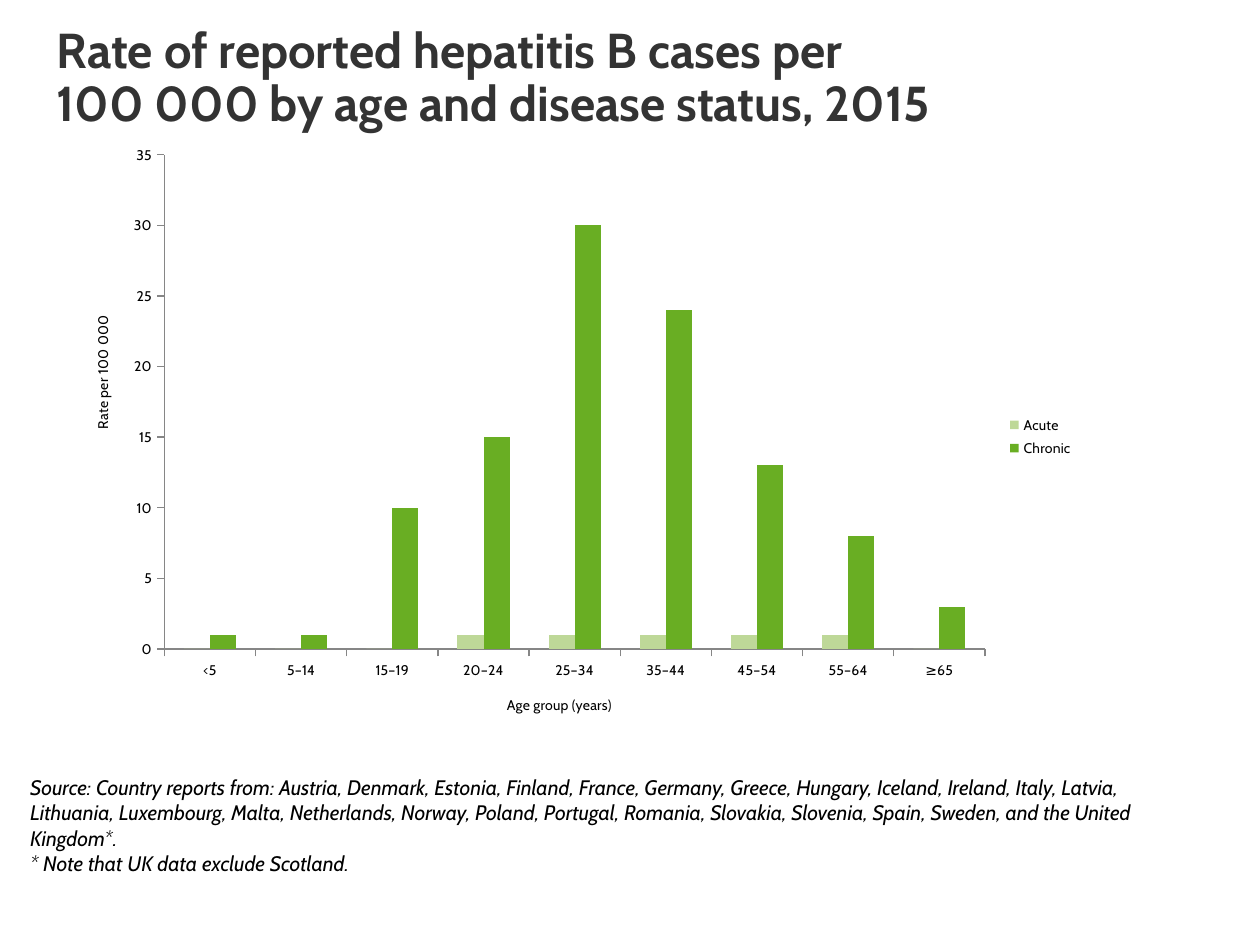
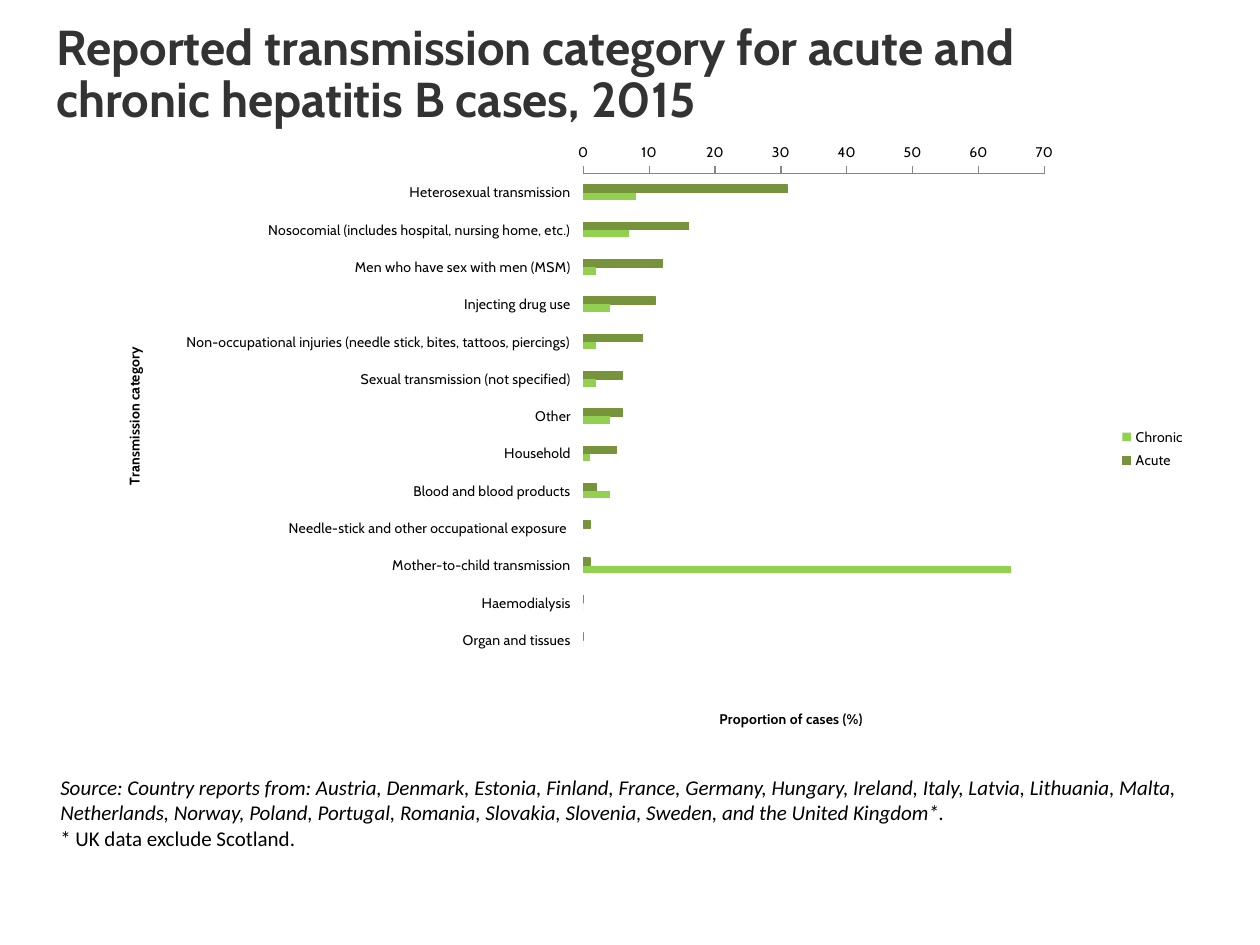
from lxml import etree
from pptx import Presentation
from pptx.chart.data import CategoryChartData
from pptx.dml.color import RGBColor
from pptx.enum.chart import XL_CHART_TYPE, XL_LEGEND_POSITION, XL_TICK_MARK
from pptx.enum.text import MSO_ANCHOR, MSO_AUTO_SIZE, PP_ALIGN
from pptx.oxml.ns import qn
from pptx.util import Inches, Pt

BLACK = RGBColor(0x00, 0x00, 0x00)
TITLE_GREY = RGBColor(0x33, 0x33, 0x33)
AXIS_GREY = RGBColor(0x86, 0x86, 0x86)
PALE_GREEN = RGBColor(0xBE, 0xD8, 0x98)
GREEN = RGBColor(0x69, 0xAE, 0x23)
OLIVE = RGBColor(0x77, 0x93, 0x3C)
LIME = RGBColor(0x92, 0xD0, 0x50)

AGE_GROUPS = ["<5", "5–14", "15–19", "20–24", "25–34", "35–44", "45–54", "55–64", "≥65"]
AGE_RATES = [
    ("Acute", [0, 0, 0, 1, 1, 1, 1, 1, 0], PALE_GREEN),
    ("Chronic", [1, 1, 10, 15, 30, 24, 13, 8, 3], GREEN),
]
ROUTES = [
    "Heterosexual transmission",
    "Nosocomial (includes hospital, nursing home, etc.)",
    "Men who have sex with men (MSM)",
    "Injecting drug use",
    "Non-occupational injuries (needle stick, bites, tattoos, piercings)",
    "Sexual transmission (not specified)",
    "Other",
    "Household",
    "Blood and blood products",
    "Needle-stick and other occupational exposure ",
    "Mother-to-child transmission",
    "Haemodialysis",
    "Organ and tissues",
]
ROUTE_SHARES = [
    ("Acute", [31, 16, 12, 11, 9, 6, 6, 5, 2, 1, 1, 0, 0], OLIVE),
    ("Chronic", [8, 7, 2, 4, 2, 2, 4, 1, 4, 0, 65, 0, 0], LIME),
]


class Deck:
    """Holds the shared style and the current slide."""

    FONT = "Cabin"
    TITLE = {"name": FONT, "size": Pt(28), "bold": True}
    NOTE = {"size": Pt(12), "bold": False}
    CHART = {"name": FONT, "size": Pt(8), "bold": False}

    def __init__(self):
        self.prs = Presentation()
        self.prs.slide_width, self.prs.slide_height = Inches(10), Inches(7.5)
        self.s = None

    def style(self, font, color, **values):
        for key, value in values.items():
            setattr(font, key, value)
        font.color.rgb = color

    def place(self, sp, box):
        for key, value in zip(("left", "top", "width", "height"), box):
            setattr(sp, key, Inches(value))

    def slide(self, title, top):
        self.s = self.prs.slides.add_slide(self.prs.slide_layouts[5])
        sp = self.s.shapes.title
        self.place(sp, (0.35, top, 9, 0.9))
        tf = sp.text_frame
        tf.text = title
        tf.word_wrap = True
        tf.auto_size = MSO_AUTO_SIZE.NONE
        tf.vertical_anchor = MSO_ANCHOR.TOP
        p = tf.paragraphs[0]
        p.alignment = PP_ALIGN.LEFT
        p.line_spacing = 0.9
        for r in p.runs:
            self.style(r.font, TITLE_GREY, **self.TITLE)

    def note(self, box, lines, font_name):
        tf = self.s.shapes.add_textbox(*map(Inches, box)).text_frame
        tf.word_wrap = True
        tf.auto_size = MSO_AUTO_SIZE.SHAPE_TO_FIT_TEXT
        for i, (text, italic) in enumerate(lines):
            p = tf.add_paragraph() if i else tf.paragraphs[0]
            r = p.add_run()
            r.text = text
            self.style(r.font, BLACK, name=font_name, italic=italic, **self.NOTE)

    def axis(self, axis, title, bold):
        axis.has_major_gridlines = False
        axis.major_tick_mark = XL_TICK_MARK.OUTSIDE
        axis.minor_tick_mark = XL_TICK_MARK.NONE
        axis.format.line.color.rgb = AXIS_GREY
        axis.format.line.width = Pt(0.75)
        self.style(axis.tick_labels.font, BLACK, **self.CHART)
        tf = axis.axis_title.text_frame
        tf.text = title
        self.style(tf.paragraphs[0].runs[0].font, BLACK, **{**self.CHART, "bold": bold})

    def chart(self, kind, box, categories, series, titles, top_value, step, gap, bold=False):
        data = CategoryChartData(number_format="0")
        data.categories = categories
        for name, values, _ in series:
            data.add_series(name, values)
        chart = self.s.shapes.add_chart(kind, *map(Inches, box), data).chart
        self.style(chart.font, BLACK, **self.CHART)
        chart.has_title = False
        chart.has_legend = True
        chart.legend.position = XL_LEGEND_POSITION.RIGHT
        chart.legend.include_in_layout = False
        self.style(chart.legend.font, BLACK, **self.CHART)
        plot = chart.plots[0]
        plot.gap_width = gap
        plot.overlap = 0
        plot.vary_by_categories = False
        for ser, (_, _, color) in zip(plot.series, series):
            ser.format.fill.solid()
            ser.format.fill.fore_color.rgb = color
        for axis, title in zip((chart.category_axis, chart.value_axis), titles):
            self.axis(axis, title, bold)
        axis = chart.value_axis
        axis.minimum_scale, axis.maximum_scale, axis.major_unit = 0, top_value, step
        axis.tick_labels.number_format = "0"
        axis.tick_labels.number_format_is_linked = False
        return chart

    def layout(self, parent, chart_box, offsets, **modes):
        for old in parent.findall(qn("c:layout")):
            parent.remove(old)
        layout = etree.Element(qn("c:layout"))
        manual = etree.SubElement(layout, qn("c:manualLayout"))
        width, height = chart_box[2:]
        shares = [length / size for length, size in zip(offsets, (width, height) * 2)]
        values = {**modes, "xMode": "edge", "yMode": "edge", **dict(zip("xywh", shares))}
        for key, value in values.items():
            etree.SubElement(manual, qn(f"c:{key}")).set("val", str(value))
        text = parent.find(qn("c:tx"))
        parent.insert(0 if text is None else parent.index(text) + 1, layout)

    def move_title(self, axis, chart_box, offsets):
        self.layout(axis.axis_title._element, chart_box, offsets)

    def move_plot(self, chart, chart_box, offsets):
        area = chart.plots[0]._element.getparent()
        self.layout(area, chart_box, offsets, layoutTarget="inner")


def age_slide(deck):
    """Rates by age group."""
    deck.slide("Rate of reported hepatitis B cases per \v"
               "100 000 by age and disease status, 2015", 0.16)
    deck.note((0.14, 6.1, 9.21, 1.11), [
        ("Source: Country reports from: Austria, Denmark, Estonia, Finland, France, Germany, "
         "Greece, Hungary, Iceland, Ireland, Italy, Latvia, Lithuania, Luxembourg, Malta, "
         "Netherlands, Norway, Poland, Portugal, Romania, Slovakia, Slovenia, Spain, Sweden, "
         "and the United Kingdom*.", True),
        ("* Note that UK data exclude Scotland.", True),
    ], deck.FONT)
    box = (0.51, 1.06, 8.11, 4.81)
    chart = deck.chart(XL_CHART_TYPE.COLUMN_CLUSTERED, box, AGE_GROUPS, AGE_RATES,
                       ("Age group (years)", "Rate per 100 000"), top_value=35, step=5, gap=150)
    deck.move_title(chart.value_axis, box, (0.2, 1.42))


def transmission_slide(deck):
    """Shares by transmission category."""
    deck.slide("Reported transmission category for acute and chronic hepatitis B cases, 2015", 0.13)
    deck.note((0.38, 6.1, 9.25, 0.71), [
        ("Source: Country reports from: Austria, Denmark, Estonia, Finland, France, Germany, "
         "Hungary, Ireland, Italy, Latvia, Lithuania, Malta, Netherlands, Norway, Poland, "
         "Portugal, Romania, Slovakia, Slovenia, Sweden, and the United Kingdom*.", True),
        ("* UK data exclude Scotland.", False),
    ], "Calibri")
    box = (0.38, 1.09, 9.13, 4.94)
    chart = deck.chart(XL_CHART_TYPE.BAR_CLUSTERED, box, ROUTES, ROUTE_SHARES,
                       ("Transmission category", "Proportion of cases (%)"),
                       top_value=70, step=10, gap=300, bold=True)
    deck.move_plot(chart, box, (4.25, 0.29, 3.66, 3.85))
    deck.move_title(chart.category_axis, box, (0.58, 1.64))
    deck.move_title(chart.value_axis, box, (5.31, 4.51))
    axis = chart.category_axis
    axis.reverse_order = True
    axis.crosses_at = len(ROUTES) + 1
    axis.format.line.fill.background()
    line = chart.plots[0].series[0].format.line
    line.color.rgb = OLIVE
    line.width = Pt(0.75)


def main():
    """Build and save the deck."""
    deck = Deck()
    age_slide(deck)
    transmission_slide(deck)
    deck.prs.save("out.pptx")


if __name__ == "__main__":
    main()
